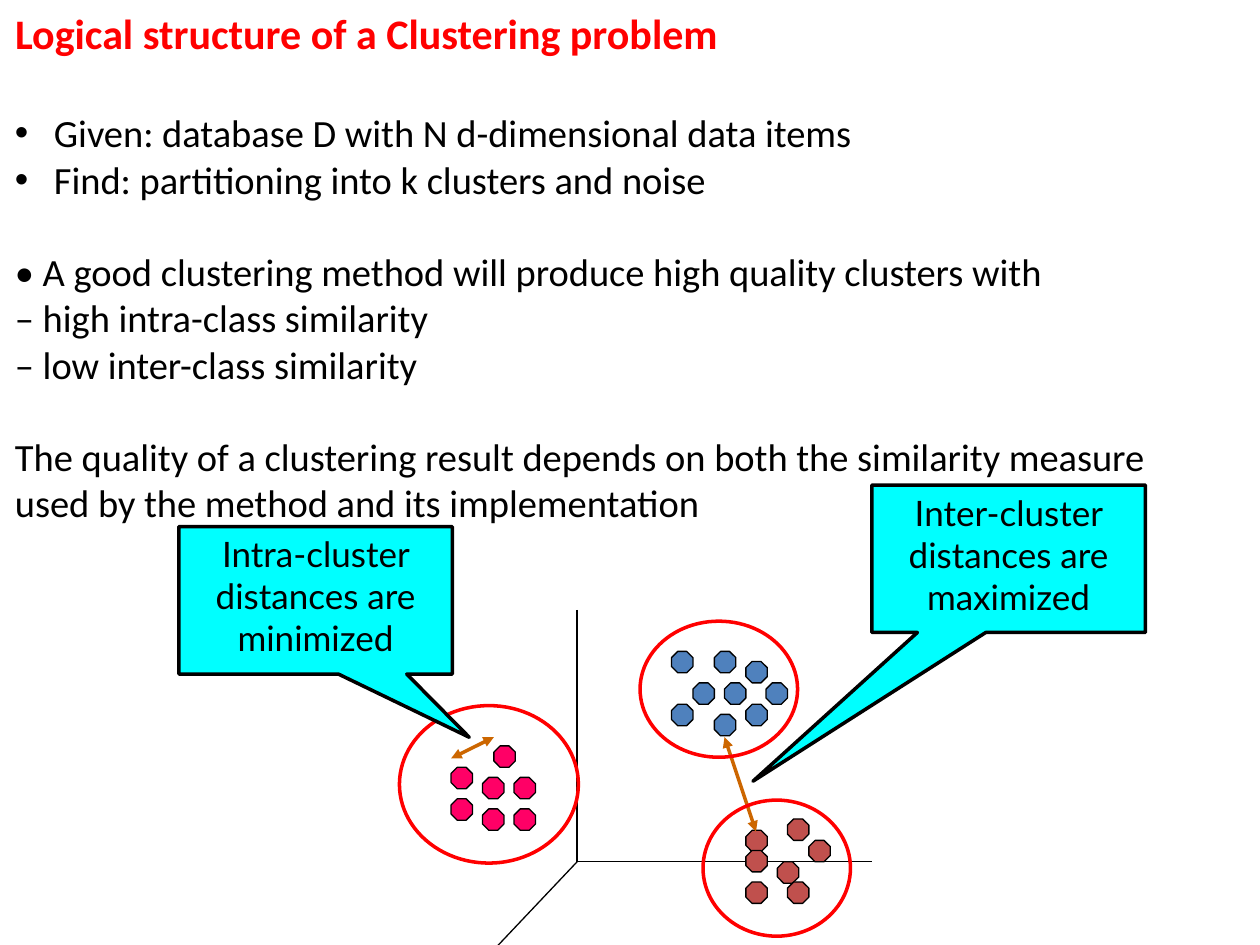
from dataclasses import dataclass
from typing import Any

from lxml import etree
from pptx import Presentation
from pptx.dml.color import RGBColor
from pptx.enum.shapes import MSO_CONNECTOR, MSO_SHAPE
from pptx.enum.text import MSO_ANCHOR, MSO_AUTO_SIZE, PP_ALIGN
from pptx.oxml.ns import qn
from pptx.util import Emu, Pt

PX_PER_INCH = 100
EMU_PER_PX = 914400 // PX_PER_INCH

BLACK = RGBColor(0x00, 0x00, 0x00)
RED = RGBColor(0xFF, 0x00, 0x00)
BLUE = RGBColor(0x4F, 0x81, 0xBD)
PINK = RGBColor(0xFF, 0x00, 0x66)
BRICK = RGBColor(0xC0, 0x50, 0x4D)
ORANGE = RGBColor(0xCC, 0x66, 0x00)
CYAN = RGBColor(0x00, 0xFF, 0xFF)

STRAIGHT = MSO_CONNECTOR.STRAIGHT
OCTAGON = MSO_SHAPE.OCTAGON
OVAL = MSO_SHAPE.OVAL
CALLOUT = MSO_SHAPE.RECTANGULAR_CALLOUT
TOP = MSO_ANCHOR.TOP
NO_FIT = MSO_AUTO_SIZE.NONE
LEFT = PP_ALIGN.LEFT
CENTER = PP_ALIGN.CENTER

POINT_SIZE = 17
BULLET_INDENT = 31
TITLE = "Logical structure of a Clustering problem"
TITLE_FONT = {"name": "Calibri", "size": Pt(24), "bold": True}
BODY_FONT = {"name": "Calibri", "size": Pt(22), "bold": False}
CALLOUT_FONT = {"name": "Lato", "size": Pt(20)}
FRAME_FORMAT = {"word_wrap": True, "auto_size": NO_FIT, "vertical_anchor": TOP}


@dataclass(frozen=True)
class Box:
    left: int
    top: int
    width: int
    height: int

    def emu(self) -> tuple[Emu, ...]:
        return tuple(px(n) for n in (self.left, self.top, self.width, self.height))


@dataclass(frozen=True)
class Statement:
    text: str
    bulleted: bool = False
    starts_block: bool = False


@dataclass(frozen=True)
class Cluster:
    color: RGBColor
    outline: Box
    points: tuple[tuple[int, int], ...]


@dataclass(frozen=True)
class Segment:
    start: tuple[int, int]
    end: tuple[int, int]


@dataclass(frozen=True)
class Note:
    text: str
    box: Box
    tip: tuple[float, float]


STATEMENTS = (
    Statement("Given: database D with N d-dimensional data items", bulleted=True),
    Statement("Find: partitioning into k clusters and noise", bulleted=True),
    Statement("• A good clustering method will produce high quality clusters with",
              starts_block=True),
    Statement("– high intra-class similarity"),
    Statement("– low inter-class similarity"),
    Statement("The quality of a clustering result depends on both the similarity "
              "measure used by the method and its implementation", starts_block=True),
)
AXES = (
    Segment((458, 484), (458, 684)),
    Segment((458, 684), (692, 684)),
    Segment((458, 684), (370, 777)),
)
CLUSTERS = (
    Cluster(BLUE, Box(508, 493, 125, 108),
            ((550, 542), (575, 542), (567, 517), (567, 567), (608, 542),
             (592, 525), (533, 517), (592, 559), (533, 559))),
    Cluster(PINK, Box(317, 560, 142, 125),
            ((358, 609), (383, 617), (383, 642), (408, 617), (392, 592),
             (408, 642), (358, 634))),
    Cluster(BRICK, Box(558, 635, 117, 108),
            ((592, 659), (642, 667), (617, 684), (592, 700), (625, 700),
             (592, 675), (625, 650))),
)
INTER_DISTANCE = Segment((600, 660), (575, 585))
INTRA_DISTANCE = Segment((358, 602), (392, 585))
INTER_NOTE = Note("Inter-cluster distances are maximized",
                  Box(692, 385, 217, 117), (-0.935, 1.509))
INTRA_NOTE = Note("Intra-cluster distances are minimized",
                  Box(142, 418, 217, 117), (0.562, 0.929))


def px(length: int) -> Emu:
    return Emu(length * EMU_PER_PX)


def apply(target: Any, values: dict[str, Any]) -> None:
    for name, value in values.items():
        setattr(target, name, value)


def write(paragraph: Any, text: str, font: dict[str, Any], color: RGBColor,
          alignment: Any) -> None:
    run = paragraph.add_run()
    run.text = text
    apply(run.font, font)
    run.font.color.rgb = color
    paragraph.alignment = alignment


def place_title(slide: Any) -> None:
    title = slide.shapes.title
    left, top, width, height = Box(2, 1, 929, 52).emu()
    apply(title, {"left": left, "top": top, "width": width, "height": height})
    apply(title.text_frame, FRAME_FORMAT)
    write(title.text_frame.paragraphs[0], TITLE, TITLE_FONT, RED, LEFT)


def add_statements(slide: Any) -> None:
    frame = slide.shapes.add_textbox(*Box(2, 82, 929, 343).emu()).text_frame
    apply(frame, FRAME_FORMAT)
    for index, statement in enumerate(STATEMENTS):
        paragraph = frame.add_paragraph() if index else frame.paragraphs[0]
        write(paragraph, statement.text, BODY_FONT, BLACK, LEFT)
        if statement.starts_block:
            paragraph.space_before = Pt(26.5)
        if statement.bulleted:
            properties = paragraph._p.get_or_add_pPr()
            properties.set("marL", str(px(BULLET_INDENT)))
            properties.set("indent", str(-px(BULLET_INDENT)))
            etree.SubElement(properties, qn("a:buFont")).set("typeface", "Arial")
            etree.SubElement(properties, qn("a:buChar")).set("char", "•")


def add_segment(slide: Any, segment: Segment, color: RGBColor, weight: float,
                arrows: bool = False) -> None:
    ends = (px(n) for n in segment.start + segment.end)
    connector = slide.shapes.add_connector(STRAIGHT, *ends)
    connector.line.color.rgb = color
    connector.line.width = Pt(weight)
    if arrows:
        outline = connector.line._get_or_add_ln()
        for end in ("a:headEnd", "a:tailEnd"):
            etree.SubElement(outline, qn(end)).set("type", "triangle")
    etree.SubElement(connector._element.spPr, qn("a:effectLst"))


def add_figure(slide: Any, kind: Any, box: Box, fill: RGBColor | None,
               line: RGBColor, weight: float) -> Any:
    figure = slide.shapes.add_shape(kind, *box.emu())
    figure.shadow.inherit = False
    if fill is None:
        figure.fill.background()
    else:
        figure.fill.solid()
        figure.fill.fore_color.rgb = fill
    figure.line.color.rgb = line
    figure.line.width = Pt(weight)
    return figure


def add_note(slide: Any, note: Note) -> None:
    callout = add_figure(slide, CALLOUT, note.box, CYAN, BLACK, 2)
    for index, offset in enumerate(note.tip):
        callout.adjustments[index] = offset
    apply(callout.text_frame, FRAME_FORMAT)
    write(callout.text_frame.paragraphs[0], note.text, CALLOUT_FONT, BLACK, CENTER)


def main() -> None:
    deck = Presentation()
    apply(deck, {"slide_width": px(1000), "slide_height": px(750)})
    slide = deck.slides.add_slide(deck.slide_layouts[5])
    place_title(slide)
    add_statements(slide)
    for axis in AXES:
        add_segment(slide, axis, BLACK, 0.75)
    for cluster in CLUSTERS:
        for left, top in cluster.points:
            point = Box(left, top, POINT_SIZE, POINT_SIZE)
            add_figure(slide, OCTAGON, point, cluster.color, BLACK, 0.75)
    add_segment(slide, INTER_DISTANCE, ORANGE, 2, arrows=True)
    add_note(slide, INTER_NOTE)
    for cluster in CLUSTERS:
        add_figure(slide, OVAL, cluster.outline, None, RED, 2)
    add_segment(slide, INTRA_DISTANCE, ORANGE, 2, arrows=True)
    add_note(slide, INTRA_NOTE)
    deck.save("out.pptx")


if __name__ == "__main__":
    main()
